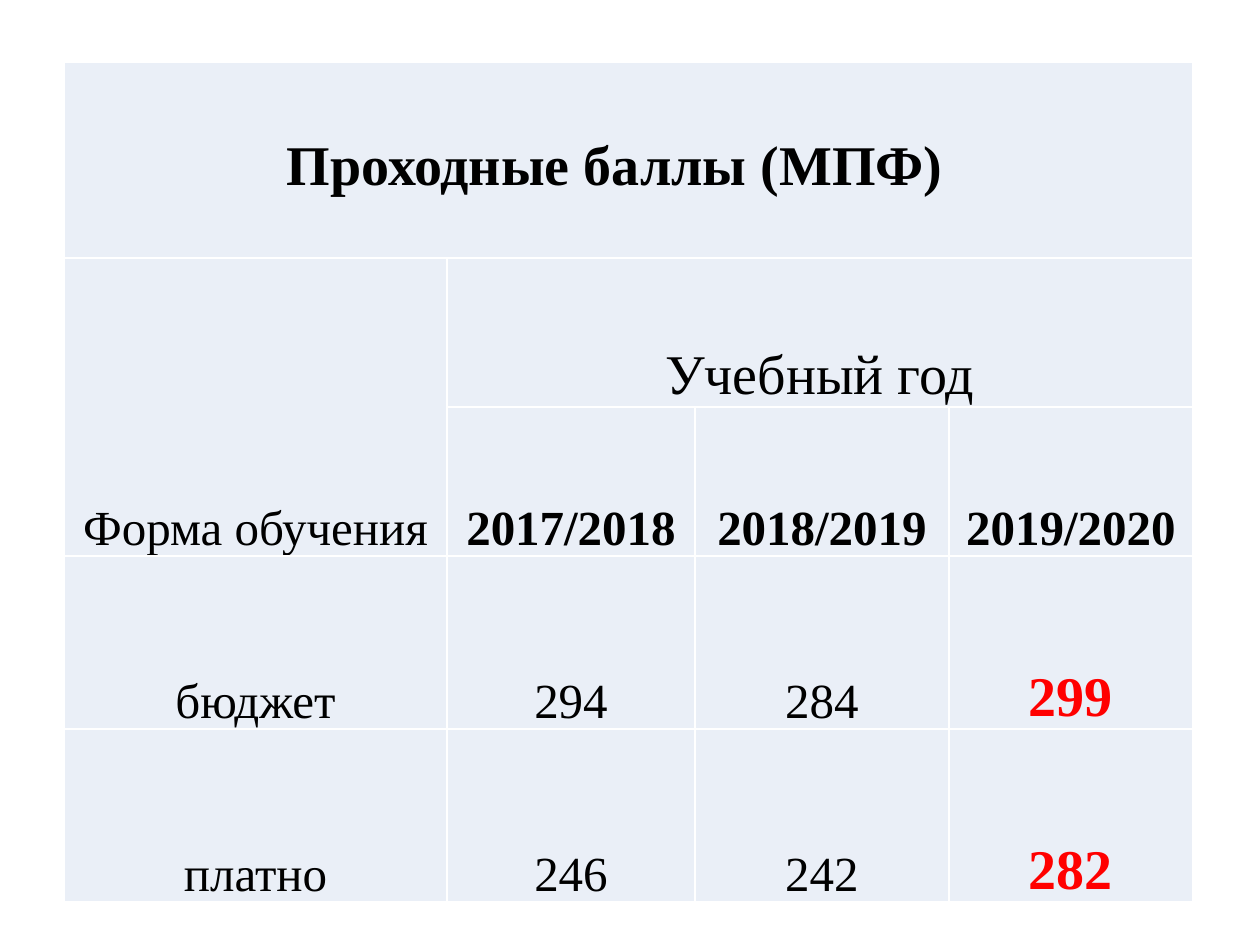
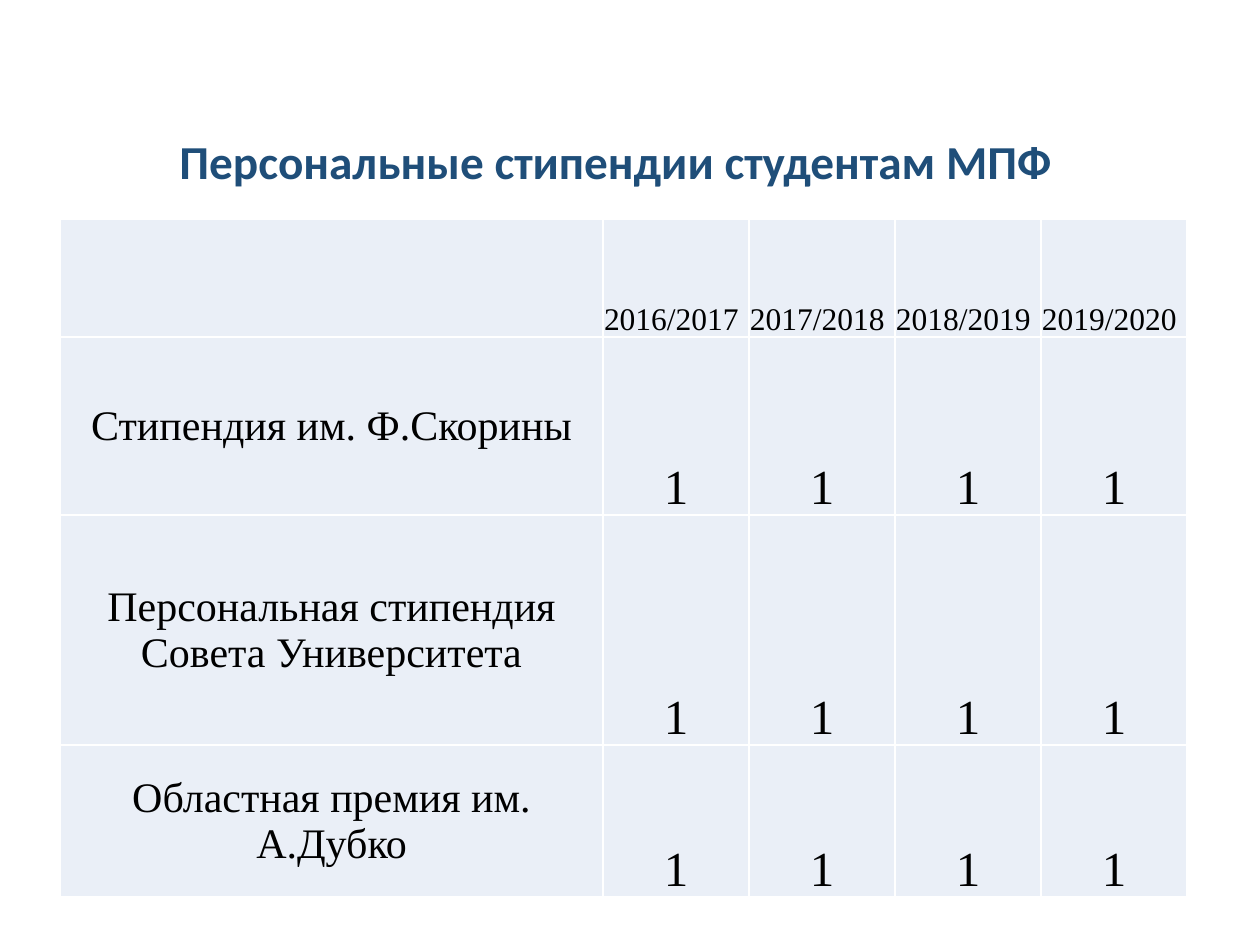
import pptx
import pptx.dml.color
import pptx.enum.text
import pptx.util

COLORS = {"cell": "EAEFF7", "text": "000000", "accent": "FF0000", "title": "1F4E79"}
TABLE_FONT = "Times New Roman"
TITLE_FONT = "Calibri"
ALIGN = pptx.enum.text.PP_ALIGN
ANCHOR = pptx.enum.text.MSO_ANCHOR
TITLE_ONLY, BLANK = 5, 6
EMU_PER_PX = 914400 / 126


def px(length):
    return pptx.util.Emu(round(length * EMU_PER_PX))


def set_font(para, name, size, color, bold=False):
    para.font.name = name
    para.font.size = pptx.util.Pt(size)
    para.font.bold = bold
    para.font.color.rgb = pptx.dml.color.RGBColor.from_string(COLORS[color])


def add_plain_table(page, left, top, widths, heights):
    """Add a table of evenly tinted cells; the table style draws white rules."""
    frame = page.shapes.add_table(len(heights), len(widths), px(left), px(top),
                                  px(sum(widths)), px(sum(heights)))
    table = frame.table
    table.first_row = table.horz_banding = False
    for column, width in zip(table.columns, widths):
        column.width = px(width)
    for row, height in zip(table.rows, heights):
        row.height = px(height)
    for cell in table.iter_cells():
        cell.fill.solid()
        cell.fill.fore_color.rgb = pptx.dml.color.RGBColor.from_string(COLORS["cell"])
        cell.margin_left = cell.margin_right = cell.margin_top = px(1)
        cell.margin_bottom = 0
    return table


def write_cell(cell, text, size, color="text", bold=False,
               align=ALIGN.CENTER, anchor=ANCHOR.BOTTOM):
    cell.text = text
    cell.vertical_anchor = anchor
    para = cell.text_frame.paragraphs[0]
    para.alignment = align
    set_font(para, TABLE_FONT, size, color, bold)


def build_scores_page(deck):
    page = deck.slides.add_slide(deck.slide_layouts[BLANK])
    table = add_plain_table(page, 64, 62, [383, 248, 254, 244], [196, 149, 149, 173, 173])

    # Heading row, set a little left of centre and above the bottom edge
    heading = table.cell(0, 0)
    heading.merge(table.cell(0, 3))
    heading.margin_right = px(28)
    heading.margin_bottom = px(60)
    write_cell(heading, "Проходные баллы (МПФ)", 32, bold=True)

    # Column headings
    table.cell(1, 0).merge(table.cell(2, 0))
    write_cell(table.cell(1, 0), "Форма обучения", 28)
    table.cell(1, 1).merge(table.cell(1, 3))
    write_cell(table.cell(1, 1), "Учебный год", 32)
    for column, year in enumerate(["2017/2018", "2018/2019", "2019/2020"], 1):
        write_cell(table.cell(2, column), year, 28, bold=True)

    # Scores, with the latest year stressed
    scores = [("бюджет", "294", "284", "299"), ("платно", "246", "242", "282")]
    for row, (*earlier, latest) in enumerate(scores, 3):
        for column, text in enumerate(earlier):
            write_cell(table.cell(row, column), text, 28)
        write_cell(table.cell(row, 3), latest, 32, "accent", bold=True)


def build_grants_page(deck):
    page = deck.slides.add_slide(deck.slide_layouts[TITLE_ONLY])

    # Title
    title = page.shapes.title
    title.left, title.top, title.width, title.height = map(px, (43, 125, 1145, 71))
    title.text_frame.text = "Персональные стипендии студентам МПФ"
    title.text_frame.auto_size = pptx.enum.text.MSO_AUTO_SIZE.SHAPE_TO_FIT_TEXT
    para = title.text_frame.paragraphs[0]
    para.alignment = ALIGN.CENTER
    set_font(para, TITLE_FONT, 27, "title", bold=True)

    # Grants by year
    years = ["2016/2017", "2017/2018", "2018/2019", "2019/2020"]
    grants = [
        ("Стипендия им. Ф.Скорины", [1, 1, 1, 1]),
        ("Персональная стипендия Совета Университета", [1, 1, 1, 1]),
        ("Областная премия им. А.Дубко", [1, 1, 1, 1]),
    ]
    table = add_plain_table(page, 60, 219, [543] + [146] * len(years), [118, 178, 230, 152])
    for column, year in enumerate(years, 1):
        write_cell(table.cell(0, column), year, 18, align=ALIGN.LEFT)
    for row, (grant, counts) in enumerate(grants, 1):
        write_cell(table.cell(row, 0), grant, 24, anchor=ANCHOR.MIDDLE)
        for column, count in enumerate(counts, 1):
            write_cell(table.cell(row, column), str(count), 28)


def main():
    deck = pptx.Presentation()
    deck.slide_width, deck.slide_height = px(1260), px(945)
    build_scores_page(deck)
    build_grants_page(deck)
    deck.save("out.pptx")


if __name__ == "__main__":
    main()
